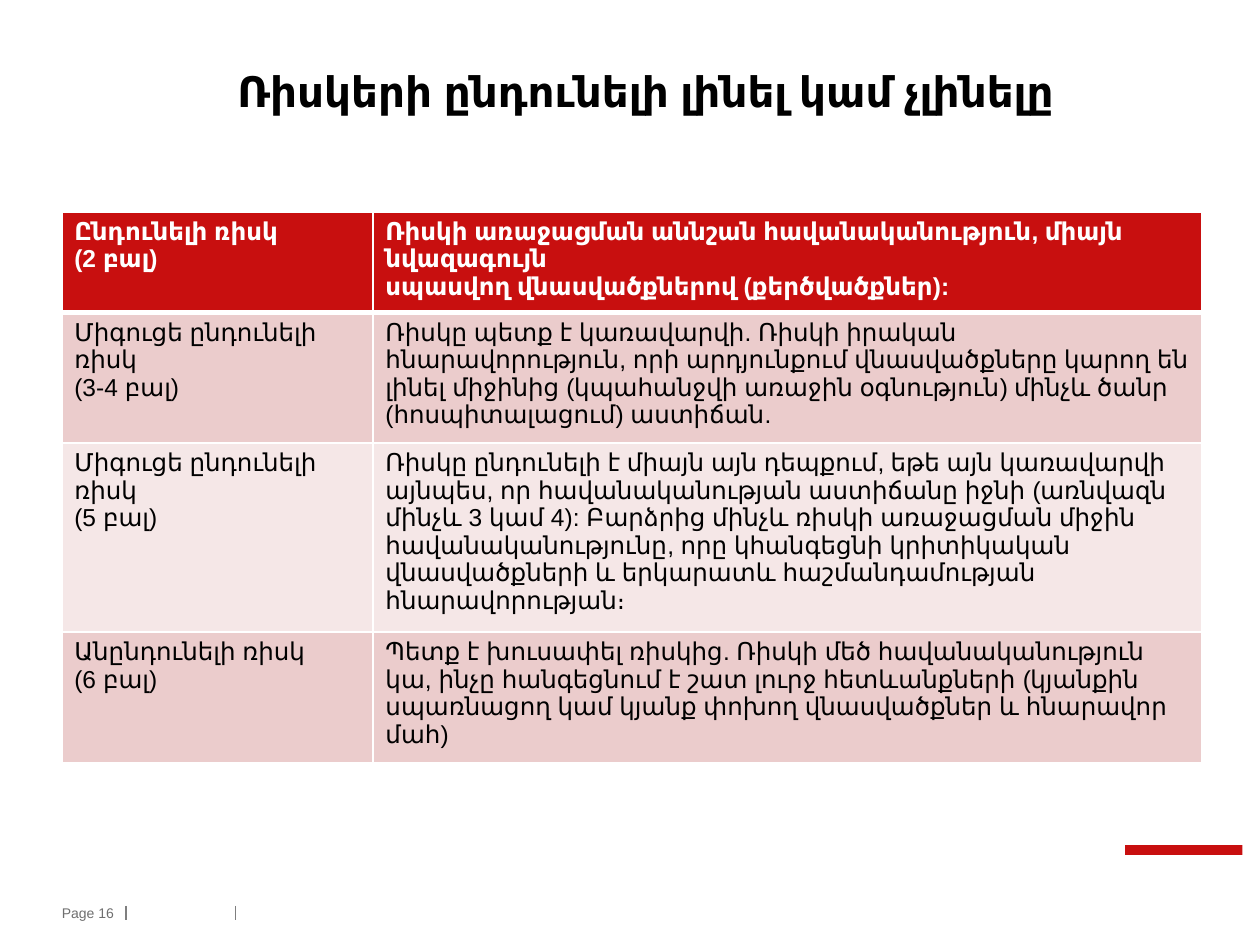
from dataclasses import dataclass

from lxml import etree
from pptx import Presentation
from pptx import util as u
from pptx.dml.color import RGBColor
from pptx.enum import shapes, text
from pptx.oxml import ns


@dataclass(frozen=True)
class Theme:
    """Colours, font and type sizes of the deck."""
    red: str = "C80F0F"
    pink: str = "EBCCCC"
    pale: str = "F5E7E7"
    white: str = "FFFFFF"
    black: str = "000000"
    rule: str = "7F7F7F"
    grey: str = "6F6F6F"
    font: str = "Arial"
    title: float = 24
    body: float = 14
    footer: float = 8


THEME = Theme()

RISK_LEVELS = [
    ("Ընդունելի ռիսկ\n(2 բալ)",
     "Ռիսկի առաջացման աննշան հավանականություն, միայն նվազագույն\n"
     "սպասվող վնասվածքներով (քերծվածքներ):"),
    ("Միգուցե ընդունելի ռիսկ\n(3-4 բալ)",
     "Ռիսկը պետք է կառավարվի. Ռիսկի իրական հնարավորություն, որի արդյունքում "
     "վնասվածքները կարող են լինել միջինից (կպահանջվի առաջին օգնություն) մինչև "
     "ծանր (հոսպիտալացում) աստիճան."),
    ("Միգուցե ընդունելի ռիսկ\n(5 բալ)",
     "Ռիսկը ընդունելի է միայն այն դեպքում, եթե այն կառավարվի այնպես, որ "
     "հավանականության աստիճանը իջնի (առնվազն մինչև 3 կամ 4): Բարձրից մինչև "
     "ռիսկի առաջացման միջին հավանականությունը, որը կհանգեցնի կրիտիկական "
     "վնասվածքների և երկարատև հաշմանդամության հնարավորության։"),
    ("Անընդունելի ռիսկ\n(6 բալ)",
     "Պետք է խուսափել ռիսկից. Ռիսկի մեծ հավանականություն կա, ինչը հանգեցնում է "
     "շատ լուրջ հետևանքների (կյանքին սպառնացող կամ կյանք փոխող վնասվածքներ և "
     "հնարավոր մահ)"),
]


def apply(target, values):
    """Set every attribute in values on target."""
    for name, value in values.items():
        setattr(target, name, value)


def write(frame, content, size, color, bold=False, **paragraph_format):
    """Fill a text frame, one paragraph for each line of content."""
    frame.text = content
    for paragraph in frame.paragraphs:
        apply(paragraph, paragraph_format)
        apply(paragraph.font, {"name": THEME.font, "size": u.Pt(size), "bold": bold})
        paragraph.font.color.rgb = RGBColor.from_string(color)


def add_text(slide, box, content, size, color, margin_right=0, wrap=True, **options):
    """Add a vertically centred text box."""
    frame = slide.shapes.add_textbox(*map(u.Pt, box)).text_frame
    apply(frame, {"margin_left": 0, "margin_top": 0, "margin_bottom": 0,
                  "margin_right": u.Pt(margin_right), "word_wrap": wrap,
                  "vertical_anchor": text.MSO_ANCHOR.MIDDLE})
    write(frame, content, size, color, **options)


def set_borders(cell, widths):
    """Give a cell white borders, with widths keyed by side."""
    properties = cell._tc.get_or_add_tcPr()
    for position, (side, width) in enumerate(widths.items()):
        line = etree.Element(ns.qn(f"a:ln{side}"), w=str(u.Pt(width)))
        fill = etree.SubElement(line, ns.qn("a:solidFill"))
        etree.SubElement(fill, ns.qn("a:srgbClr"), val=THEME.white)
        properties.insert(position, line)


def add_title(slide, box):
    """Place the centred slide title."""
    add_text(slide, box, "Ռիսկերի ընդունելի լինել կամ չլինելը", THEME.title, THEME.black,
             margin_right=7.2, bold=True, alignment=text.PP_ALIGN.CENTER, line_spacing=0.9)


def add_risk_table(slide, box):
    """Place the table of risk levels and their meaning."""
    left, top, width, height = box
    frame = slide.shapes.add_table(len(RISK_LEVELS), 2, *map(u.Pt, box))
    table = frame.table
    label_width = 177.8
    for column, column_width in zip(table.columns, (label_width, width - label_width)):
        column.width = u.Pt(column_width)
    for index, (row, contents) in enumerate(zip(table.rows, RISK_LEVELS)):
        row.height = u.Pt(29.5)
        header = index == 0
        fill = THEME.red if header else (THEME.pale, THEME.pink)[index % 2]
        color = THEME.white if header else THEME.black
        for cell, content in zip(row.cells, contents):
            cell.fill.solid()
            cell.fill.fore_color.rgb = RGBColor.from_string(fill)
            write(cell.text_frame, content, THEME.body, color, bold=header)
            set_borders(cell, {"L": 1, "R": 1, "T": 3 if index == 1 else 1,
                               "B": 3 if header else 1})
    frame.height = u.Pt(height)


def add_accent(slide, box):
    """Place the red accent bar."""
    bar = slide.shapes.add_shape(shapes.MSO_SHAPE.RECTANGLE, *map(u.Pt, box))
    bar.shadow.inherit = False
    bar.fill.solid()
    bar.fill.fore_color.rgb = RGBColor.from_string(THEME.red)
    bar.line.fill.background()


def add_footer(slide, box):
    """Place the page number and the two dividers."""
    left, top, width, height = box
    for offset in (36.7, width):
        x = left + offset
        divider = slide.shapes.add_connector(
            shapes.MSO_CONNECTOR.STRAIGHT, *map(u.Pt, (x, top, x, top + height)))
        divider.line.width = u.Pt(0.75)
        divider.line.color.rgb = RGBColor.from_string(THEME.rule)
        etree.SubElement(divider._element.spPr, ns.qn("a:effectLst"))
    add_text(slide, (left, top - 0.5, 35.3, 9.4), "Page 16", THEME.footer, THEME.grey,
             wrap=False)


def main():
    """Build and save the risk acceptability slide."""
    presentation = Presentation()
    apply(presentation, {"slide_width": u.Pt(720), "slide_height": u.Pt(540)})
    slide = presentation.slides.add_slide(presentation.slide_layouts[6])
    add_accent(slide, (643, 483, 67, 5.5))
    add_footer(slide, (35.3, 517.6, 99.3, 8))
    add_title(slide, (35.3, 25.2, 674.6, 56.9))
    add_risk_table(slide, (35.3, 121, 651.6, 247))
    presentation.save("out.pptx")


if __name__ == "__main__":
    main()
